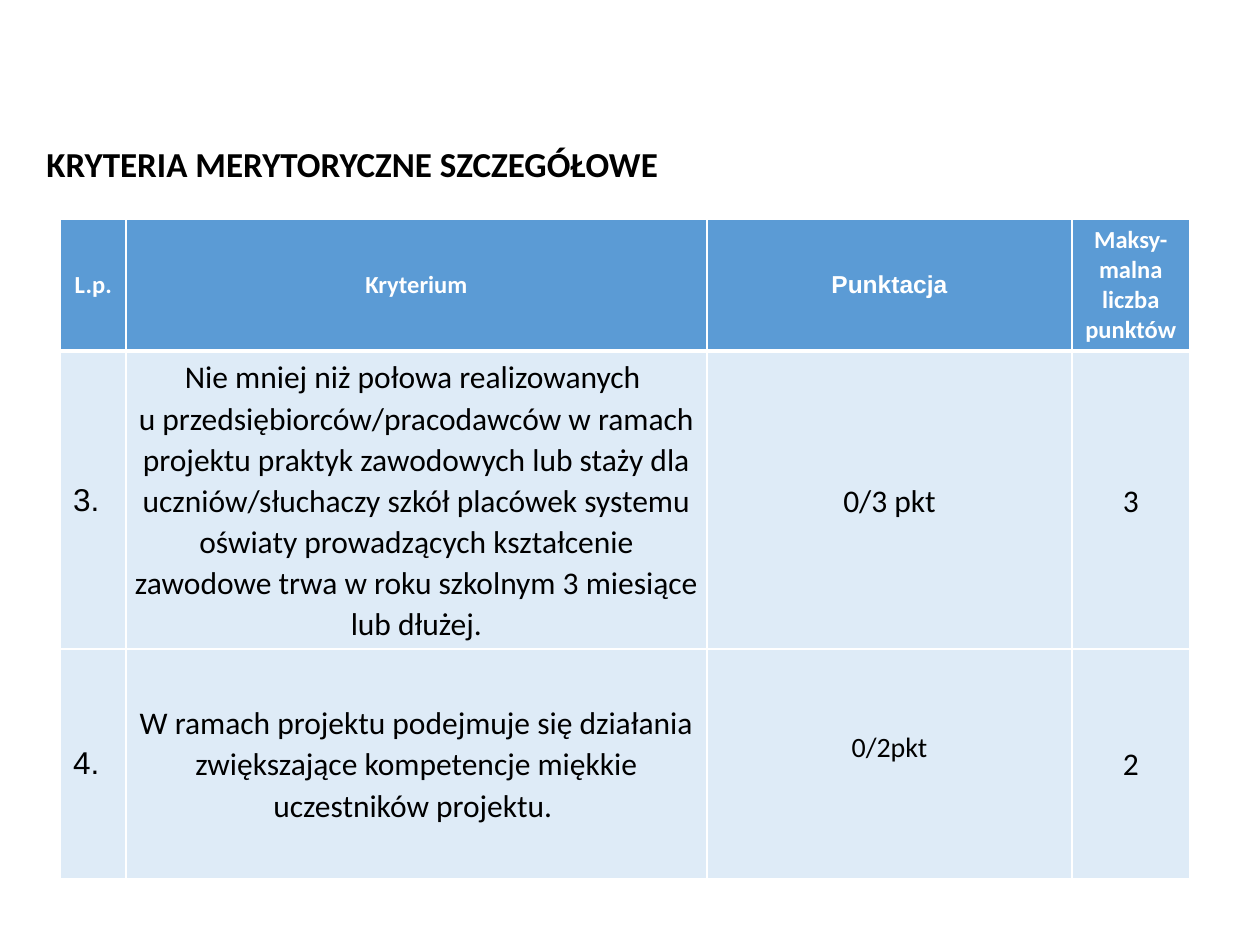
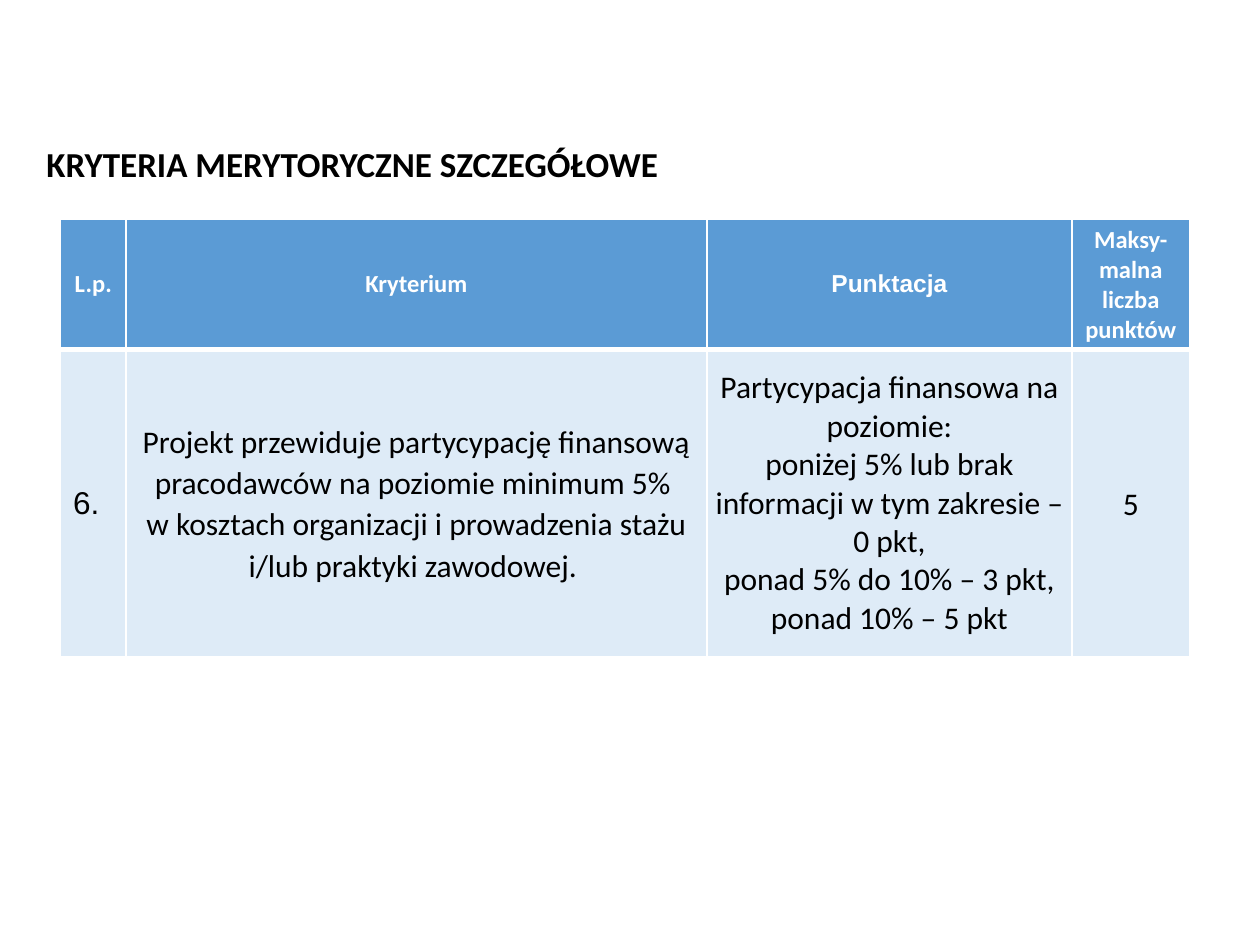
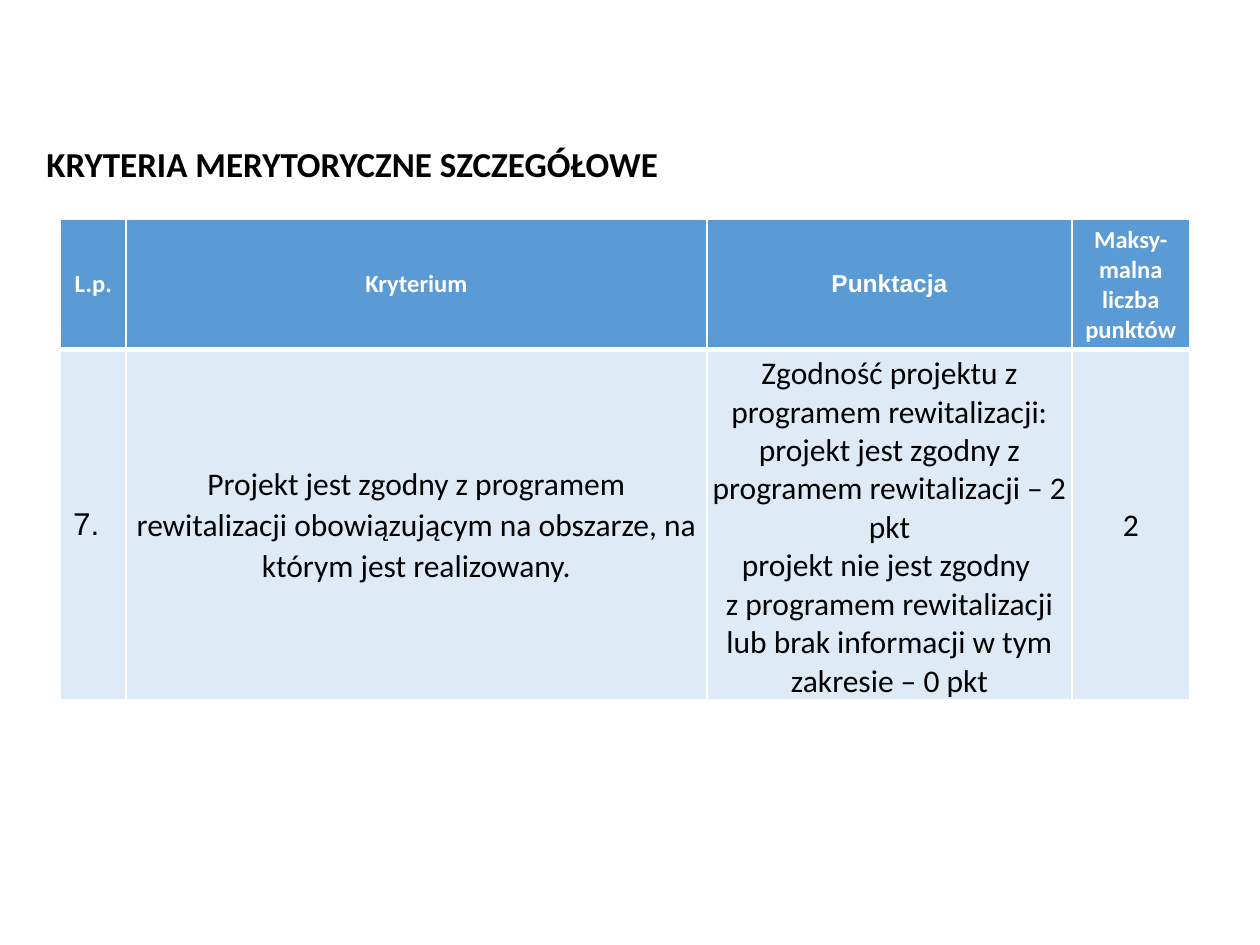
from lxml.etree import SubElement
from pptx import Presentation
from pptx.dml.color import RGBColor
from pptx.enum.text import MSO_ANCHOR as Anchor, MSO_AUTO_SIZE as AutoSize, PP_ALIGN as Align
from pptx.oxml.ns import qn
from pptx.util import Inches, Pt

# Content: rows are (number, criterion, scoring paragraphs, maximum points)
TITLE = "KRYTERIA MERYTORYCZNE SZCZEGÓŁOWE"
HEADINGS = ("L.p.", "Kryterium", "Punktacja", "Maksy-malna liczba punktów")
SLIDES = [
    {"title_width": 5.1, "heights": (1.43, 1.82), "criteria": [
        ("3.",
         "Nie mniej niż połowa realizowanych \nu przedsiębiorców/pracodawców w ramach projektu "
         "praktyk zawodowych lub staży dla uczniów/słuchaczy szkół placówek systemu oświaty "
         "prowadzących kształcenie zawodowe trwa w roku szkolnym 3 miesiące lub dłużej.",
         ["0/3 pkt"], "3"),
        ("4.",
         "W ramach projektu podejmuje się działania zwiększające kompetencje miękkie "
         "uczestników projektu. ",
         ["0/2pkt"], "2"),
    ]},
    {"title_width": 5.18, "heights": (2.44,), "criteria": [
        ("6.",
         "Projekt przewiduje partycypację finansową pracodawców na poziomie minimum 5% \n"
         "w kosztach organizacji i prowadzenia stażu i/lub praktyki zawodowej. ",
         ["Partycypacja finansowa na poziomie:",
          "poniżej 5% lub brak informacji w tym zakresie – 0 pkt,",
          "ponad 5% do 10% – 3 pkt,",
          "ponad 10% – 5 pkt"], "5"),
    ]},
    {"title_width": 5.18, "heights": (1.43,), "criteria": [
        ("7.",
         "Projekt jest zgodny z programem rewitalizacji obowiązującym na obszarze, "
         "na którym jest realizowany.",
         ["Zgodność projektu z programem rewitalizacji:",
          "projekt jest zgodny z programem rewitalizacji – 2 pkt",
          "projekt nie jest zgodny \nz programem rewitalizacji lub brak informacji "
          "w tym zakresie – 0 pkt"], "2"),
    ]},
]

# Shared style
COLORS = {"header": "5B9BD5", "body": "DEEBF7", "light": "FFFFFF", "dark": "000000"}
COLUMNS = (0.52, 4.61, 2.9, 0.93)
HEADER_HEIGHT = 0.99
TABLE_LEFT, TABLE_TOP = 0.48, 1.74
INSET = 0.04
SMALL_SCORE = "0/2pkt"  # smaller and raised within its cell


def write(paragraph, text, size, font="Calibri", color="dark", bold=False):
    for i, line in enumerate(text.split("\n")):
        if i:
            paragraph.add_line_break()
        run = paragraph.add_run()
        run.text = line
        run.font.name, run.font.size, run.font.bold = font, Pt(size), bold
        run.font.color.rgb = RGBColor.from_string(COLORS[color])


def style_cell(cell, fill, top, bottom):
    """White borders (left, right, top, bottom), then the fill."""
    props = cell._tc.get_or_add_tcPr()
    for side, width in (("L", 1), ("R", 1), ("T", top), ("B", bottom)):
        line = SubElement(props, qn(f"a:ln{side}"), w=str(Pt(width)))
        SubElement(SubElement(line, qn("a:solidFill")), qn("a:srgbClr"), val=COLORS["light"])
    cell.fill.solid()
    cell.fill.fore_color.rgb = RGBColor.from_string(COLORS[fill])
    cell.vertical_anchor = Anchor.MIDDLE


def add_title(slide, width):
    title = slide.shapes.add_textbox(Inches(0.27), Inches(1.08), Inches(width), Inches(0.44))
    frame = title.text_frame
    frame.word_wrap = False
    frame.auto_size = AutoSize.SHAPE_TO_FIT_TEXT
    frame.vertical_anchor = Anchor.MIDDLE
    write(frame.paragraphs[0], TITLE, 20, bold=True)


def fill_header(cell, heading):
    style_cell(cell, "header", 1, 3)
    paragraph = cell.text_frame.paragraphs[0]
    paragraph.alignment = Align.CENTER
    font = "Arial" if heading == "Punktacja" else "Calibri"
    write(paragraph, heading, 14, font, "light", True)


def fill_body(cell, content, is_number, top):
    style_cell(cell, "body", top, 1)
    lines = content if isinstance(content, list) else [content]
    if not is_number:
        cell.margin_left = cell.margin_right = cell.margin_top = cell.margin_bottom = Inches(INSET)
    small = content == [SMALL_SCORE]
    if small:
        cell.margin_bottom = Inches(0.31)
    frame = cell.text_frame
    for i, line in enumerate(lines):
        paragraph = frame.add_paragraph() if i else frame.paragraphs[0]
        if not is_number:
            paragraph.alignment = Align.CENTER
            if len(lines) == 1:
                paragraph.line_spacing = 1.07
        write(paragraph, line, 16 if small else 18, "Arial" if is_number else "Calibri")


def add_criteria(slide, criteria, body_heights):
    heights = (HEADER_HEIGHT, *body_heights)
    table = slide.shapes.add_table(
        len(heights), len(COLUMNS), Inches(TABLE_LEFT), Inches(TABLE_TOP),
        Inches(sum(COLUMNS)), Inches(sum(heights))).table
    table.horz_banding = False
    for column, width in zip(table.columns, COLUMNS):
        column.width = Inches(width)
    for row, height in zip(table.rows, heights):
        row.height = Inches(height)
    for c, heading in enumerate(HEADINGS):
        fill_header(table.cell(0, c), heading)
    for r, criterion in enumerate(criteria, 1):
        for c, content in enumerate(criterion):
            fill_body(table.cell(r, c), content, c == 0, 3 if r == 1 else 1)


def main():
    deck = Presentation()
    deck.slide_width, deck.slide_height = Inches(10), Inches(7.5)
    for page in SLIDES:
        slide = deck.slides.add_slide(deck.slide_layouts[6])
        add_criteria(slide, page["criteria"], page["heights"])
        add_title(slide, page["title_width"])
    deck.save("out.pptx")


if __name__ == "__main__":
    main()
